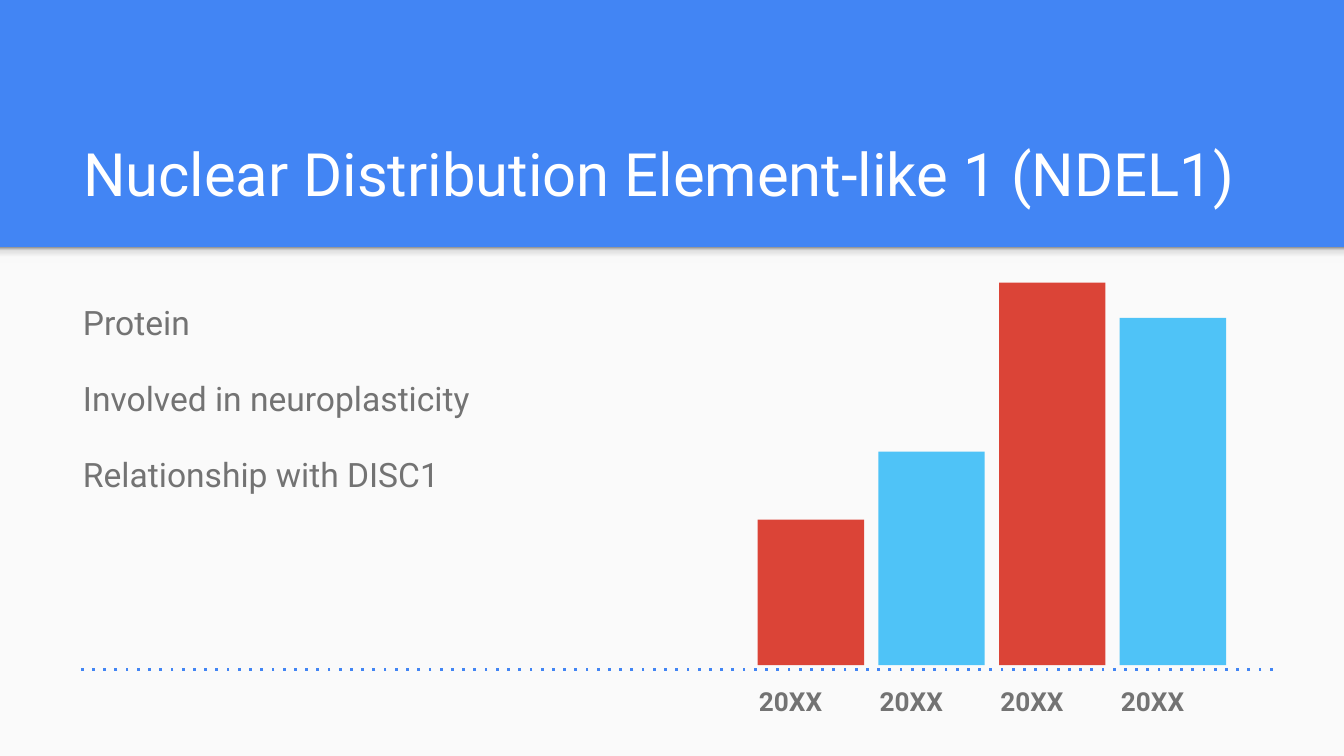
from pptx import Presentation
from pptx.dml.color import RGBColor
from pptx.enum.dml import MSO_LINE
from pptx.enum.shapes import MSO_CONNECTOR as LINE, MSO_SHAPE as SHAPE
from pptx.enum.text import MSO_ANCHOR as ANCHOR
from pptx.oxml import parse_xml
from pptx.oxml.ns import qn
from pptx.util import Pt
from lxml import etree

HUES = {"blue": "4285F4", "paper": "FAFAFA", "white": "FFFFFF",
        "gray": "737373", "red": "DB4437", "sky": "4FC3F7"}
FADE = [(0, "F9F9F9"), (36, "F9F9F9"), (80, "DEDEDE"), (100, "999999")]
BARS = [("20XX", 78, "red"), ("20XX", 114.5, "sky"),
        ("20XX", 205, "red"), ("20XX", 186, "sky")]
NO_GRID = "{2D5ABB26-0587-4C30-8999-92F81FD0307C}"


def hue(name):
    return RGBColor.from_string(HUES[name])


def put_text(frame, *lines, size, color="gray", bold=False, space=None,
             after=0, anchor=ANCHOR.TOP):
    frame.word_wrap = True
    frame.vertical_anchor = anchor
    for i, line in enumerate(lines):
        para = frame.add_paragraph() if i else frame.paragraphs[0]
        para.line_spacing = space
        para.space_after = Pt(after)
        run = para.add_run()
        run.text = line
        font = run.font
        font.name, font.size, font.bold = "Roboto", Pt(size), bold
        font.color.rgb = hue(color)


def add_box(slide, x, y, w, h, *lines, **style):
    box = slide.shapes.add_textbox(Pt(x), Pt(y), Pt(w), Pt(h))
    frame = box.text_frame
    frame.margin_left = frame.margin_right = Pt(7.2)
    frame.margin_top = frame.margin_bottom = Pt(7.2)
    put_text(frame, *lines, **style)


def add_rect(slide, x, y, w, h, color):
    rect = slide.shapes.add_shape(SHAPE.RECTANGLE, Pt(x), Pt(y), Pt(w), Pt(h))
    rect.shadow.inherit = False
    rect.line.fill.background()
    rect.fill.solid()
    rect.fill.fore_color.rgb = hue(color)
    return rect


def add_panel(slide, x, y, w, h):
    """Pale panel with a soft shade along its top edge."""
    add_rect(slide, x, y, w, h, "paper")
    shade = add_rect(slide, x, y, w, 8.5, "paper")
    shade.fill.gradient()
    shade.fill.gradient_angle = 90
    stops = shade._element.spPr.find(".//" + qn("a:gsLst"))
    for stop in list(stops):
        stops.remove(stop)
    for pos, color in FADE:
        stop = etree.SubElement(stops, qn("a:gs"), pos=str(pos * 1000))
        etree.SubElement(stop, qn("a:srgbClr"), val=color)


def add_years(slide, x, y, pitch):
    grid = slide.shapes.add_table(1, len(BARS), Pt(x), Pt(y),
                                  Pt(pitch * len(BARS)), Pt(19))
    table = grid.table
    table.first_row = table.horz_banding = False
    table._tbl.tblPr.find(qn("a:tableStyleId")).text = NO_GRID
    for col, (year, _, _) in enumerate(BARS):
        table.columns[col].width = Pt(pitch)
        cell = table.cell(0, col)
        cell.fill.background()
        cell.margin_left = cell.margin_right = Pt(7.2)
        cell.margin_top = cell.margin_bottom = Pt(7.2)
        put_text(cell.text_frame, year, size=14, bold=True, space=1.15)


def add_bars(slide, x, base, pitch, width):
    for i, (_, tall, color) in enumerate(BARS):
        add_rect(slide, x + i * pitch, base - tall, width, tall, color)


def add_axis(slide, x, y, w):
    axis = slide.shapes.add_connector(LINE.STRAIGHT, Pt(x + w), Pt(y),
                                      Pt(x), Pt(y))
    axis.line.color.rgb = hue("blue")
    axis.line.width = Pt(1.5)
    axis.line.dash_style = MSO_LINE.ROUND_DOT
    # The preset "dot" has no member of its own in MSO_LINE
    axis.line._ln.find(qn("a:prstDash")).set("val", "dot")
    etree.SubElement(axis._element.spPr, qn("a:effectLst"))


def main():
    deck = Presentation()
    deck.slide_width, deck.slide_height = Pt(720), Pt(405)
    slide = deck.slides.add_slide(deck.slide_layouts[6])
    slide.background.fill.solid()
    slide.background.fill.fore_color.rgb = hue("blue")

    add_panel(slide, 0, 132.5, 720, 272.5)
    add_box(slide, 37.4, 58.3, 647.3, 60.5,
            "Nuclear Distribution Element-like 1 (NDEL1)",
            size=32, color="white", anchor=ANCHOR.BOTTOM)
    add_box(slide, 37.4, 151.2, 314.6, 213, "Protein",
            "Involved in neuroplasticity", "Relationship with DISC1",
            size=18, space=1.15, after=16)
    add_years(slide, 399.4, 358.6, 64.65)
    add_bars(slide, 405.9, 356.4, 64.65, 57)
    add_axis(slide, 40.3, 358.6, 641.5)
    deck.save("out.pptx")


if __name__ == "__main__":
    main()
